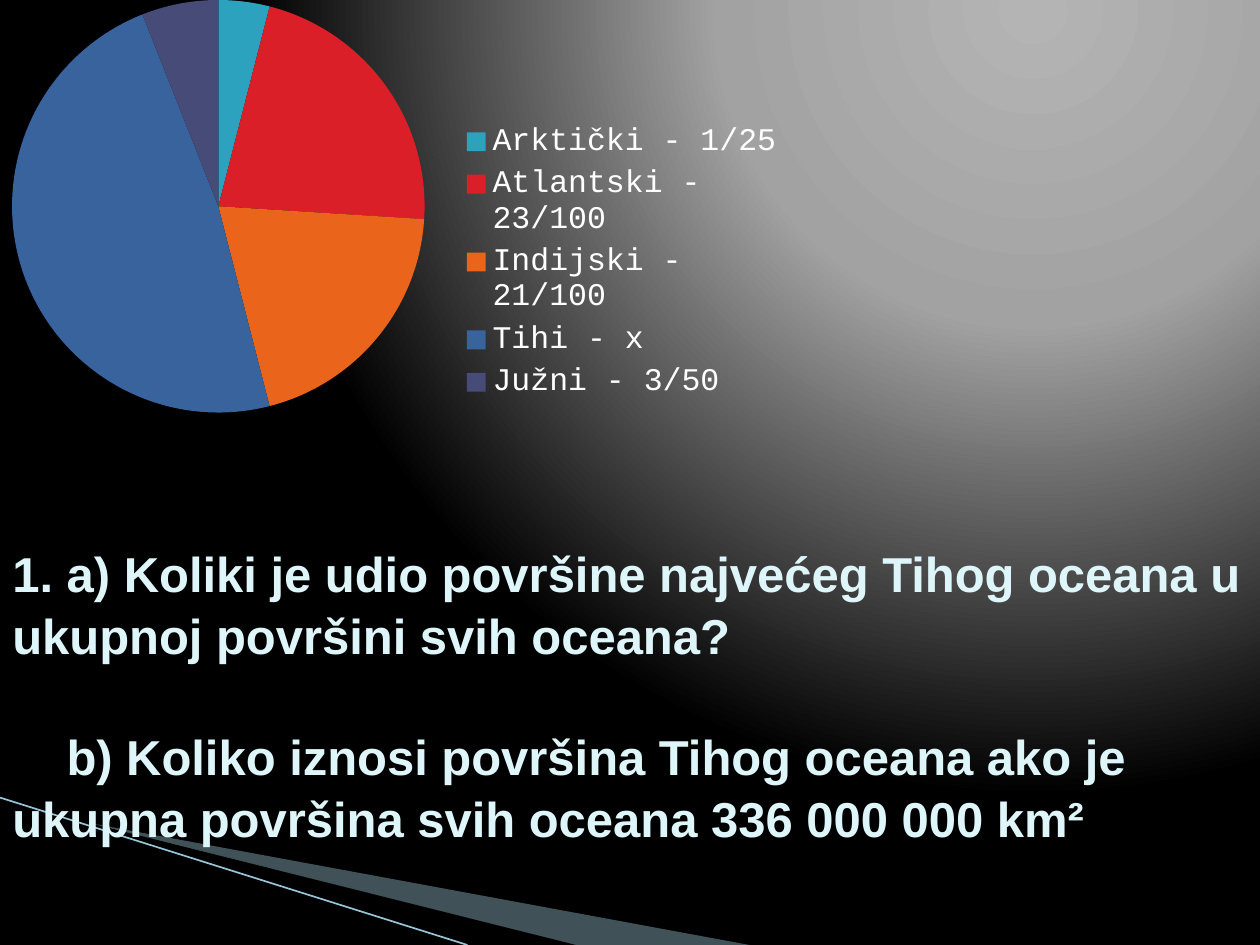
from lxml import etree
from pptx import Presentation
from pptx.chart.data import CategoryChartData as ChartData
from pptx.dml.color import RGBColor
from pptx.enum.chart import XL_CHART_TYPE as ChartType, XL_LEGEND_POSITION as LegendSide
from pptx.enum.shapes import MSO_CONNECTOR as Connector
from pptx.enum.text import MSO_ANCHOR as Anchor
from pptx.oxml import parse_xml
from pptx.oxml.ns import nsdecls, qn
from pptx.util import Inches, Pt

BLACK = RGBColor(0x00, 0x00, 0x00)
WHITE = RGBColor(0xFF, 0xFF, 0xFF)
ICE = RGBColor(0xDE, 0xF5, 0xFA)
MIST = RGBColor(0xA0, 0xCB, 0xDC)
STREAK = RGBColor(0x97, 0xC5, 0xD8)
GLOW = [(0, RGBColor(0xB4, 0xB4, 0xB4)), (40, RGBColor(0xA2, 0xA2, 0xA2)), (100, BLACK)]
OCEANS = [
    ("Arktički - 1/25", 4, RGBColor(0x2D, 0xA2, 0xBF)),
    ("Atlantski - 23/100", 22, RGBColor(0xDA, 0x1F, 0x28)),
    ("Indijski - 21/100", 20, RGBColor(0xEB, 0x64, 0x1B)),
    ("Tihi - x", 48, RGBColor(0x39, 0x63, 0x9D)),
    ("Južni - 3/50", 6, RGBColor(0x47, 0x4B, 0x78)),
]
QUESTIONS = [
    ("1. a) Koliki je udio površine najvećeg Tihog oceana u ukupnoj površini svih oceana?", {}),
    ("b) Koliko iznosi površina Tihog oceana ako je ukupna površina svih oceana 336 000 000 km²",
     {"space_before": Pt(34)}),
]


class OceanSlide:
    """Draws elements on one slide, with lengths as shares of its size."""

    question_font = {"name": "Arial", "size": Pt(28), "bold": True}
    legend_font = {"name": "Courier New", "size": Pt(18), "bold": False}

    def __init__(self, deck):
        self.width, self.height = deck.slide_width, deck.slide_height
        self.slide = deck.slides.add_slide(deck.slide_layouts[6])

    def place(self, *shares):
        sides = (self.width, self.height) * 2
        return [round(share * side) for share, side in zip(shares, sides)]

    def style(self, target, formats, color=None):
        for name, value in formats.items():
            setattr(target, name, value)
        if color is not None:
            target.color.rgb = color

    def background(self, stops, **focus):
        fill = self.slide.background.fill
        fill.solid()
        solid = self.slide.background._cSld.find(".//" + qn("a:solidFill"))
        marks = "".join(f'<a:gs pos="{pos * 1000}"><a:srgbClr val="{color}"/></a:gs>'
                        for pos, color in stops)
        edges = " ".join(f'{side}="{share * 1000}"' for side, share in focus.items())
        gradient = parse_xml(
            f'<a:gradFill {nsdecls("a")} rotWithShape="1"><a:gsLst>{marks}</a:gsLst>'
            f'<a:path path="circle"><a:fillToRect {edges}/></a:path></a:gradFill>')
        solid.getparent().replace(solid, gradient)

    def wedge(self, corners, color, opacity=100):
        points = [self.place(*corner) for corner in corners]
        builder = self.slide.shapes.build_freeform(*points[0])
        builder.add_line_segments(points[1:], close=True)
        shape = builder.convert_to_shape()
        shape.shadow.inherit = False
        shape.fill.solid()
        shape.fill.fore_color.rgb = color
        shape.line.fill.background()
        if opacity < 100:
            tone = shape._element.spPr.find(".//" + qn("a:srgbClr"))
            etree.SubElement(tone, qn("a:alpha"), val=str(opacity * 1000))

    def streak(self, start, end, color, weight):
        line = self.slide.shapes.add_connector(
            Connector.STRAIGHT, *self.place(*start), *self.place(*end))
        self.style(line.line, {"width": Pt(weight)}, color)
        etree.SubElement(line._element.spPr, qn("a:effectLst"))

    def layout(self, x, y, w, h, inner=False):
        target = '<c:layoutTarget val="inner"/>' if inner else ""
        sizes = "".join(f'<c:{tag} val="{value}"/>' for tag, value in
                        zip(("xMode", "yMode", "x", "y", "w", "h"), ("edge", "edge", x, y, w, h)))
        return parse_xml(f'<c:layout {nsdecls("c")}><c:manualLayout>{target}{sizes}'
                         '</c:manualLayout></c:layout>')

    def pie(self, area, slices):
        names, values, colors = zip(*slices)
        data = ChartData()
        data.categories = names
        data.add_series("Series 1", values)
        chart = self.slide.shapes.add_chart(ChartType.PIE, *self.place(*area), data).chart
        self.style(chart, {"has_title": False, "has_legend": True})
        self.style(chart.font, self.legend_font, WHITE)
        self.style(chart.legend, {"position": LegendSide.RIGHT, "include_in_layout": False})
        chart.plots[0].vary_by_categories = True
        for index, color in enumerate(colors):
            fill = chart.plots[0].series[0].points[index].format.fill
            fill.solid()
            fill.fore_color.rgb = color
        plot_area = chart._chartSpace.chart.plotArea
        for old in plot_area.findall(qn("c:layout")):
            plot_area.remove(old)
        plot_area.insert(0, self.layout(0.01, 0, 0.5, 0.74, inner=True))
        legend = chart.legend._element
        for old in legend.findall(qn("c:layout")):
            legend.remove(old)
        legend.find(qn("c:legendPos")).addnext(self.layout(0.54, 0.21, 0.4, 0.52))

    def questions(self, area, paragraphs):
        frame = self.slide.shapes.add_textbox(*self.place(*area)).text_frame
        self.style(frame, {"word_wrap": True, "vertical_anchor": Anchor.MIDDLE})
        for index, (text, spacing) in enumerate(paragraphs):
            paragraph = frame.add_paragraph() if index else frame.paragraphs[0]
            self.style(paragraph, {"text": text, "line_spacing": 1.05, **spacing})
            if index:
                paragraph._p.get_or_add_pPr().set("indent", str(Inches(0.43)))
            self.style(paragraph.runs[0].font, self.question_font, ICE)


def main():
    deck = Presentation()
    deck.slide_width, deck.slide_height = Inches(10), Inches(7.5)
    page = OceanSlide(deck)
    page.background(GLOW, l=65, t=0, r=0, b=98)
    page.wedge([(0.055, 0.867), (0.595, 1), (0.456, 1), (0.055, 0.866)], MIST, 40)
    page.wedge([(0.053, 0.865), (0.457, 1), (0.372, 1), (0.054, 0.866)], BLACK)
    page.streak((0, 0.844), (0.371, 1), STREAK, 0.95)
    page.pie((0, 0, 2 / 3, 0.59), OCEANS)
    page.questions((0, 0.468, 1, 0.532), QUESTIONS)
    deck.save("out.pptx")


if __name__ == "__main__":
    main()
